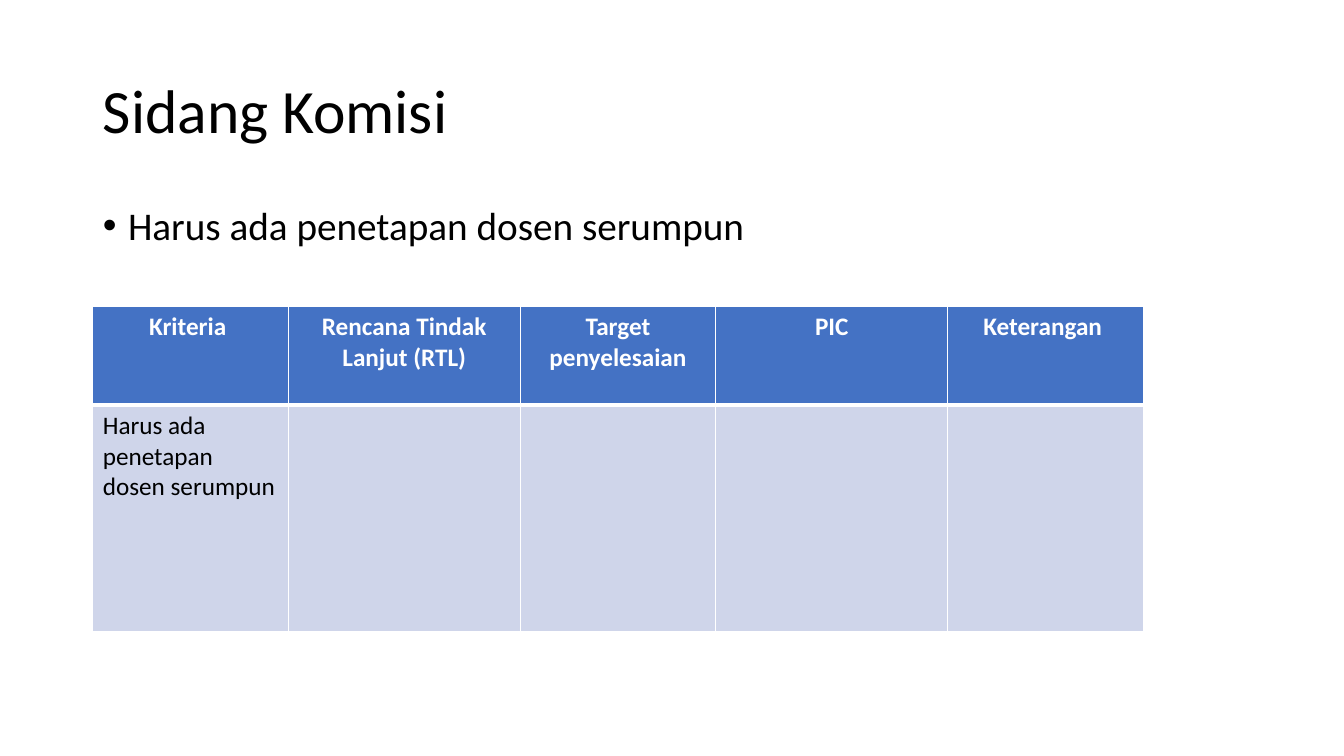
import pptx
import pptx.dml.color
import pptx.enum.text
import pptx.oxml
import pptx.oxml.ns
import pptx.util

Inches = pptx.util.Inches
RGBColor = pptx.dml.color.RGBColor
ALIGN = pptx.enum.text.PP_ALIGN
ANCHOR = pptx.enum.text.MSO_ANCHOR

BLACK = RGBColor(0x00, 0x00, 0x00)
WHITE = RGBColor(0xFF, 0xFF, 0xFF)
HEADER_BLUE = RGBColor(0x44, 0x72, 0xC4)
BODY_BLUE = RGBColor(0xCF, 0xD5, 0xEA)


def add_span(para, text, size, color, bold=False):
    span = para.add_run()
    span.text = text
    span.font.name = "Calibri"
    span.font.size = pptx.util.Pt(size)
    span.font.color.rgb = color
    span.font.bold = bold


def add_border(cell, side, points):
    line = pptx.oxml.parse_xml(
        f'<a:ln{side} {pptx.oxml.ns.nsdecls("a")} w="{pptx.util.Pt(points)}">'
        f'<a:solidFill><a:srgbClr val="{WHITE}"/></a:solidFill></a:ln{side}>')
    cell._tc.get_or_add_tcPr().append(line)


deck = pptx.Presentation()
deck.slide_width = Inches(13.33)
deck.slide_height = Inches(7.5)
page = deck.slides.add_slide(deck.slide_layouts[1])
title, body = page.placeholders

# Title and bullet list
for box, top, height, anchor, text, size in [
    (title, 0.4, 1.45, ANCHOR.MIDDLE, "Sidang Komisi", 44),
    (body, 2, 4.76, ANCHOR.TOP, "Harus ada penetapan dosen serumpun", 28),
]:
    box.left, box.top = Inches(0.92), Inches(top)
    box.width, box.height = Inches(11.5), Inches(height)
    box.text_frame.auto_size = pptx.enum.text.MSO_AUTO_SIZE.NONE
    box.text_frame.vertical_anchor = anchor
    para = box.text_frame.paragraphs[0]
    para.alignment = ALIGN.LEFT
    para.line_spacing = 0.9
    add_span(para, text, size, BLACK)

# Bullet indent
bullet = body.text_frame.paragraphs[0]
bullet.space_before = pptx.util.Pt(10)
bullet_format = bullet._p.get_or_add_pPr()
bullet_format.set("marL", str(Inches(0.25)))
bullet_format.set("indent", str(Inches(-0.25)))
bullet_format.append(pptx.oxml.parse_xml(
    f'<a:buFont {pptx.oxml.ns.nsdecls("a")} typeface="Arial"/>'))
bullet_format.append(pptx.oxml.parse_xml(
    f'<a:buChar {pptx.oxml.ns.nsdecls("a")} char="•"/>'))

# Follow-up plan table
rows = [
    ["Kriteria ", "Rencana Tindak Lanjut (RTL)", "Target penyelesaian", "PIC", "Keterangan "],
    ["Harus ada penetapan dosen serumpun", "", "", "", ""],
]
plan = page.shapes.add_table(2, 5, Inches(0.92), Inches(3.04), Inches(10.42), Inches(3.23)).table
plan.horz_banding = False
for index, column in enumerate(plan.columns):
    column.width = Inches(2.3 if index % 2 else 1.94)
for row, height in zip(plan.rows, [0.98, 2.25]):
    row.height = Inches(height)

for row_index, texts in enumerate(rows):
    is_header = row_index == 0
    for column_index, text in enumerate(texts):
        cell = plan.cell(row_index, column_index)
        # The rule under the header is thicker than the others
        for side, points in [("L", 1), ("R", 1), ("T", 1 if is_header else 3),
                             ("B", 3 if is_header else 1)]:
            add_border(cell, side, points)
        cell.fill.solid()
        cell.fill.fore_color.rgb = HEADER_BLUE if is_header else BODY_BLUE
        if text:
            para = cell.text_frame.paragraphs[0]
            para.alignment = ALIGN.CENTER if is_header else ALIGN.LEFT
            add_span(para, text, 18, WHITE if is_header else BLACK, is_header)

deck.save("out.pptx")
